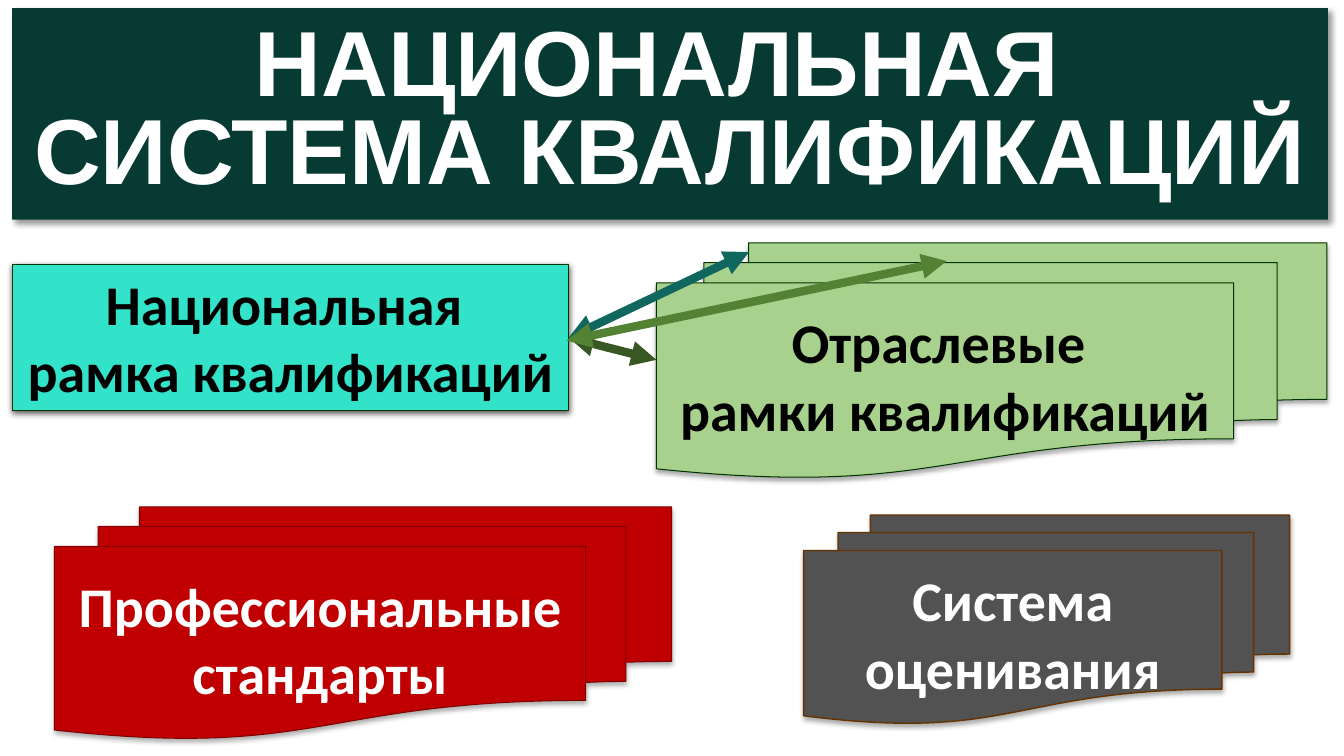
from dataclasses import dataclass

from lxml import etree
from pptx import Presentation
from pptx.dml.color import RGBColor
from pptx.enum.shapes import MSO_CONNECTOR, MSO_SHAPE
from pptx.enum.text import MSO_ANCHOR, MSO_AUTO_SIZE, PP_ALIGN
from pptx.oxml.ns import qn
from pptx.util import Inches, Pt

RECTANGLE = MSO_SHAPE.RECTANGLE
DOCUMENTS = MSO_SHAPE.FLOWCHART_MULTIDOCUMENT
STRAIGHT = MSO_CONNECTOR.STRAIGHT
TOP, MIDDLE = MSO_ANCHOR.TOP, MSO_ANCHOR.MIDDLE
CENTER = PP_ALIGN.CENTER
NO_AUTOFIT = MSO_AUTO_SIZE.NONE
TITLE_ONLY = 5


@dataclass(frozen=True)
class Shadow:
    opacity: int
    blur: float
    distance: float
    angle: int


@dataclass(frozen=True)
class Block:
    kind: MSO_SHAPE
    left: float
    top: float
    width: float
    height: float
    fill: str
    line: str
    text_color: str
    lines: tuple[str, ...]
    shadow: Shadow
    anchor: MSO_ANCHOR = MIDDLE
    line_width: float = 0.75
    top_inset: float = 0.05


@dataclass(frozen=True)
class Arrow:
    start: tuple[float, float]
    end: tuple[float, float]
    color: str


TITLE_LINES = ("НАЦИОНАЛЬНАЯ ", "СИСТЕМА КВАЛИФИКАЦИЙ ")
TITLE_SHADOW = Shadow(40, 4, 3, 45)
FRAME_SHADOW = Shadow(63, 4.5, 1.5, 90)
STACK_SHADOW = Shadow(32, 3.5, 2.2, 90)

FRAMEWORKS = (
    Block(RECTANGLE, 0.12, 2.62, 5.52, 1.45, "32E2C9", "003300", "000000",
          ("Национальная ", "рамка квалификаций"), FRAME_SHADOW, TOP),
    Block(DOCUMENTS, 6.51, 2.41, 6.65, 2.33, "A9D18E", "003300", "000000",
          ("Отраслевые ", "рамки квалификаций"), STACK_SHADOW, TOP, top_inset=0.25),
    Block(DOCUMENTS, 0.54, 5.03, 6.12, 2.3, "C00000", "800000", "FFFFFF",
          ("Профессиональные стандарты",), STACK_SHADOW),
)
ASSESSMENT = Block(DOCUMENTS, 7.97, 5.11, 4.82, 2.07, "525252", "663300", "FFFFFF",
                   ("Система оценивания",), STACK_SHADOW, line_width=1)
ARROWS = (
    Arrow((5.64, 3.35), (6.51, 3.57), "385723"),
    Arrow((5.64, 3.35), (7.43, 2.5), "0F675D"),
    Arrow((5.62, 3.38), (9.39, 2.59), "548235"),
)


def rgb(value: str) -> RGBColor:
    return RGBColor.from_string(value)


def paint(shape, fill: str, shadow: Shadow) -> None:
    """Give a shape a solid fill and an outer shadow."""
    shape.fill.solid()
    shape.fill.fore_color.rgb = rgb(fill)
    shape.shadow.inherit = False
    effects = shape.element.spPr.find(qn("a:effectLst"))
    outer = etree.SubElement(
        effects, qn("a:outerShdw"),
        blurRad=str(Pt(shadow.blur)), dist=str(Pt(shadow.distance)),
        dir=str(shadow.angle * 60000), algn="ctr", rotWithShape="0")
    color = etree.SubElement(outer, qn("a:srgbClr"), val="000000")
    etree.SubElement(color, qn("a:alpha"), val=str(shadow.opacity * 1000))


def write(shape, lines: tuple[str, ...], font: str, size: int, color: str,
          anchor: MSO_ANCHOR, spacing: float = 1.0) -> None:
    """Write centred bold lines, one paragraph each."""
    frame = shape.text_frame
    frame.word_wrap = True
    frame.auto_size = NO_AUTOFIT
    frame.vertical_anchor = anchor
    for index, line in enumerate(lines):
        para = frame.add_paragraph() if index else frame.paragraphs[0]
        para.alignment = CENTER
        para.line_spacing = spacing
        span = para.add_run()
        span.text = line
        span.font.name = font
        span.font.size = Pt(size)
        span.font.bold = True
        span.font.color.rgb = rgb(color)


def add_title(page) -> None:
    title = page.shapes.title
    title.left, title.top = Inches(0.12), Inches(0.08)
    title.width, title.height = Inches(13.05), Inches(2.1)
    paint(title, "083A34", TITLE_SHADOW)
    write(title, TITLE_LINES, "Arial", 66, "FFFFFF", MIDDLE, 0.8)


def add_block(page, block: Block) -> None:
    box = page.shapes.add_shape(
        block.kind, Inches(block.left), Inches(block.top),
        Inches(block.width), Inches(block.height))
    paint(box, block.fill, block.shadow)
    box.line.color.rgb = rgb(block.line)
    box.line.width = Pt(block.line_width)
    box.text_frame.margin_top = Inches(block.top_inset)
    write(box, block.lines, "Calibri", 40, block.text_color, block.anchor)


def add_arrow(page, arrow: Arrow) -> None:
    points = [Inches(value) for value in arrow.start + arrow.end]
    connector = page.shapes.add_connector(STRAIGHT, *points)
    connector.line.color.rgb = rgb(arrow.color)
    connector.line.width = Pt(6)
    properties = connector.element.spPr
    outline = properties.find(qn("a:ln"))
    for end in ("a:headEnd", "a:tailEnd"):
        etree.SubElement(outline, qn(end), type="triangle")
    etree.SubElement(properties, qn("a:effectLst"))


def main() -> None:
    deck = Presentation()
    deck.slide_width, deck.slide_height = Inches(13.33), Inches(7.5)
    page = deck.slides.add_slide(deck.slide_layouts[TITLE_ONLY])

    # Heading
    add_title(page)

    # Frameworks and standards, with the arrows above them
    for block in FRAMEWORKS:
        add_block(page, block)
    for arrow in ARROWS:
        add_arrow(page, arrow)

    # Assessment system
    add_block(page, ASSESSMENT)

    deck.save("out.pptx")


if __name__ == "__main__":
    main()
